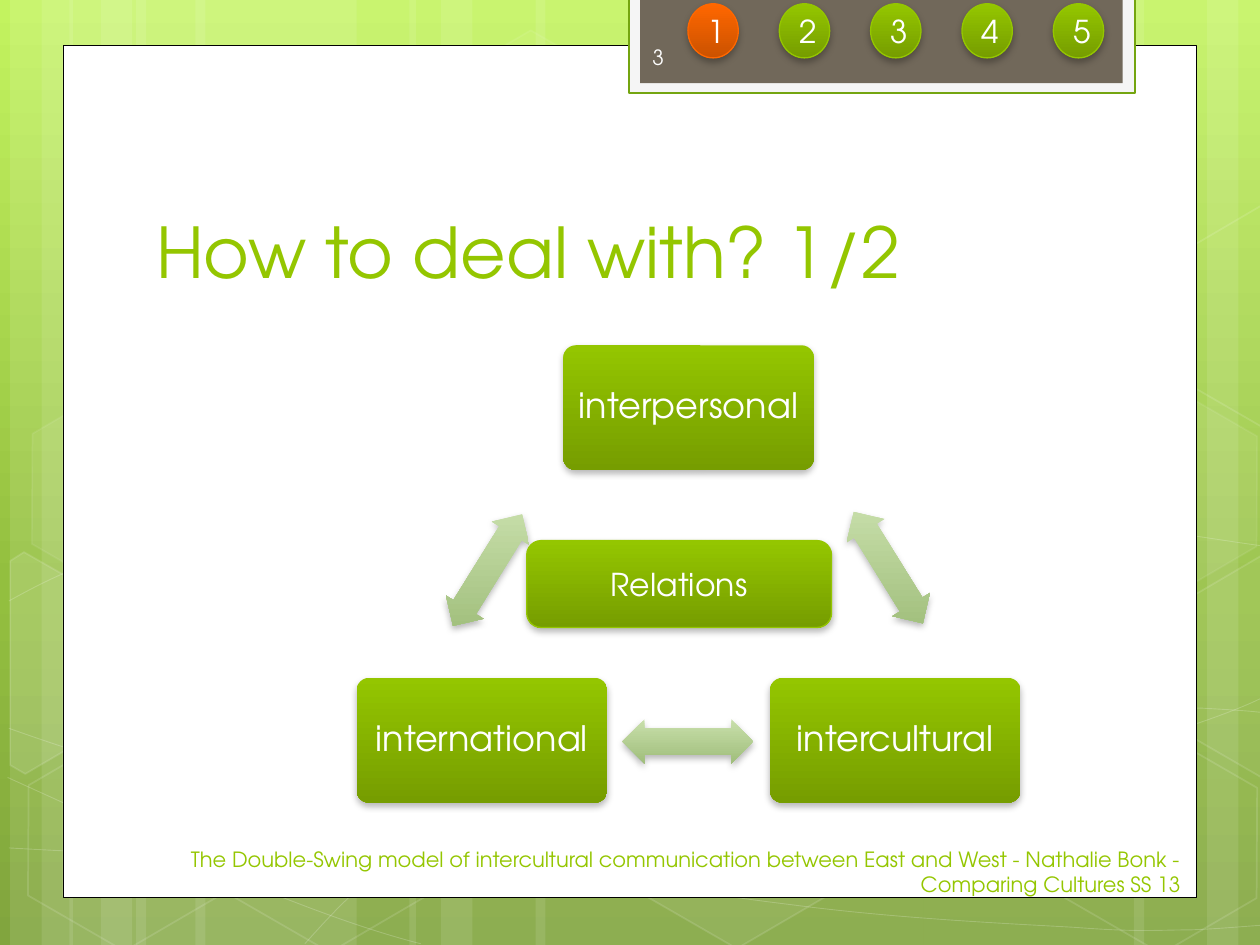
"""Build the "How to deal with?" slide with its relations cycle and numbered chapter tabs."""
from copy import deepcopy
from math import cos, radians, sin

from lxml.etree import SubElement
from pptx import Presentation
from pptx.dml.color import RGBColor
from pptx.enum.shapes import MSO_SHAPE as Shape
from pptx.enum.text import MSO_ANCHOR as Anchor, MSO_AUTO_SIZE as AutoSize, PP_ALIGN as Align
from pptx.oxml.ns import qn
from pptx.util import Inches, Pt

FONT = "TeX Gyre Adventor"
WHITE, BLACK = RGBColor(255, 255, 255), RGBColor(0, 0, 0)
NUMBER_WHITE = RGBColor(0xFE, 0xFE, 0xFE)
GREEN, DARK_GREEN = RGBColor(0x94, 0xC6, 0x00), RGBColor(0x76, 0x9D, 0x00)
ORANGE, DARK_ORANGE = RGBColor(0xFF, 0x67, 0x00), RGBColor(0xCB, 0x52, 0x00)
PALE, DARK_PALE = RGBColor(0xC8, 0xDF, 0xAB), RGBColor(0xA0, 0xBE, 0x7B)
OFF_WHITE, TAUPE = RGBColor(0xF5, 0xF5, 0xF5), RGBColor(0x71, 0x68, 0x5A)
BORDER_GREEN = RGBColor(0x74, 0xA5, 0x10)
BACKDROP = [(0, RGBColor(0xC3, 0xF3, 0x5F)), (0.62, RGBColor(0x93, 0xBF, 0x3F)),
            (1, RGBColor(0x81, 0xA5, 0x3E))]

TITLE = "How to deal with? 1/2"
FOOTER = ("The Double-Swing model of intercultural communication between East and West"
          " - Nathalie Bonk - Comparing Cultures SS 13")
PAGE_NUMBER = "3"
CHAPTERS = ["1", "2", "3", "4", "5"]
CURRENT_CHAPTER = "1"
CYCLE_NODES = [("interpersonal", 4.47, 2.74), ("intercultural", 6.11, 5.38),
               ("international", 2.83, 5.38)]
CYCLE_ARROWS = [(6.53, 4.33, 58.2), (4.94, 5.71, 180), (3.35, 4.35, 301.8)]

BANDS = [(1.08, 1.75), (0.08, 0.5), (0.33, 0.83), (1.55, 1.75), (0.55, 0.5), (0.8, 0.83),
         (7.33, 1.75), (9.58, 0.5), (9, 0.83), (4.25, 3.08), (3.25, 0.5), (3.5, 0.83)]
CURVES = [
    [(0.07, 6.73), (0.61, 6.76), (1.15, 6.79), (1.9, 6.78), (2.65, 6.77), (3.58, 6.75),
     (4.58, 6.65), (5.58, 6.55), (7, 6.36), (7.92, 6.17), (8.83, 5.98), (9.77, 5.68),
     (10.07, 5.51)],
    [(0.07, 4.77), (0.36, 4.61), (0.65, 4.46), (1.21, 4.31), (1.78, 4.16), (2.59, 3.94),
     (3.47, 3.87), (4.36, 3.8), (5.44, 3.79), (6.54, 3.87), (7.64, 3.95), (9.47, 4.26),
     (10.07, 4.34)],
    [(0.06, 6.17), (1.27, 6.72), (2.47, 7.27), (3.34, 7.49)],
    [(0.07, 5.78), (0.38, 5.89), (0.7, 6), (1.28, 6.16), (1.86, 6.31), (2.73, 6.56),
     (3.57, 6.73), (4.4, 6.9), (5.45, 7.08), (6.28, 7.18), (7.11, 7.29), (8, 7.33),
     (8.53, 7.36), (9.05, 7.4), (9.19, 7.38), (9.45, 7.38), (9.71, 7.37), (9.89, 7.35),
     (10.07, 7.34)],
    [(2.42, 7.49), (2.6, 7.29), (2.78, 7.09), (3.02, 6.91), (3.26, 6.73), (3.6, 6.53),
     (3.88, 6.39), (4.16, 6.25), (4.33, 6.19), (4.7, 6.09), (5.06, 5.99), (5.73, 5.85),
     (6.08, 5.78), (6.44, 5.71), (6.49, 5.71), (6.8, 5.69), (7.11, 5.66), (7.6, 5.63),
     (7.94, 5.62), (8.29, 5.61), (8.86, 5.62), (8.86, 5.62), (9.08, 5.62), (9.31, 5.62),
     (9.53, 5.62), (9.71, 5.63), (9.88, 5.64), (9.97, 5.65), (10.06, 5.66), (10.03, 5.65),
     (10.06, 5.66)],
]
HEXAGONS = [(3.34, 0.36, 4, 8), (4.97, 5.89, 6, 12), (0.11, 5.91, None, 12),
            (0.14, 3.12, 7, 8), (1.74, 5.92, None, 12), (7.53, 4.53, 10, 12),
            (8.34, 5.93, None, 12), (8.34, 3.14, 7, 8)]
HEXAGON_TILT = 30
CUT_HEXAGONS = [
    ((0.36, 5.35), 10,
     [(0.08, 4.45), (0.19, 4.38), (0.96, 4.82), (0.95, 5.7), (0.2, 6.14), (0.08, 6.07)]),
    ((9.85, 5.2), 4,
     [(9.26, 4.85), (10.01, 4.41), (10.09, 4.46), (10.09, 6.13), (10.02, 6.17), (9.26, 5.73)]),
    ((9.85, 2.41), None,
     [(9.26, 2.07), (10.01, 1.63), (10.1, 1.68), (10.09, 3.35), (10.02, 3.39), (9.26, 2.95)]),
]


def paint_gradient(fill, element, stops):
    fill.gradient()
    fill.gradient_angle = 270
    stop_list = next(element.iter(qn("a:gsLst")))
    stop_list.getparent().set("rotWithShape", "0")
    while len(stop_list) < len(stops):
        stop_list.append(deepcopy(stop_list[-1]))
    for stop, (position, color) in zip(fill.gradient_stops, stops):
        stop.position, stop.color.rgb = position, color


def style(shape, fill=None, line=None, width=1, alphas=()):
    shape.shadow.inherit = False
    if fill is None:
        shape.fill.background()
    elif isinstance(fill, tuple) and not isinstance(fill, RGBColor):
        paint_gradient(shape.fill, shape.element, list(enumerate(fill)))
    else:
        shape.fill.solid()
        shape.fill.fore_color.rgb = fill
    if line is None:
        shape.line.fill.background()
    else:
        shape.line.color.rgb = line
        shape.line.width = Pt(width)
    for color, alpha in zip(shape.element.spPr.iter(qn("a:srgbClr")), alphas):
        SubElement(color, qn("a:alpha"), val=str(alpha * 1000))
    return shape


def add_preset(page, preset, at, **look):
    return style(page.shapes.add_shape(preset, *map(Inches, at)), **look)


def add_outline(page, points, close, **look):
    start, *rest = [(Inches(x), Inches(y)) for x, y in points]
    builder = page.shapes.build_freeform(*start)
    builder.add_line_segments(rest, close=close)
    return style(builder.convert_to_shape(), **look)


def bend(outline):
    segments = list(outline.element.iter(qn("a:lnTo")))
    for first in range(0, len(segments), 3):
        curve = SubElement(segments[first].getparent(), qn("a:cubicBezTo"))
        for segment in segments[first:first + 3]:
            curve.append(segment[0])
            segment.getparent().remove(segment)


def turn_back(points, center, angle):
    turn = radians(-angle)
    offsets = [(x - center[0], y - center[1]) for x, y in points]
    return [(center[0] + x * cos(turn) - y * sin(turn),
             center[1] + x * sin(turn) + y * cos(turn)) for x, y in offsets]


def add_shadow(shape):
    effects = shape.element.spPr.find(qn("a:effectLst"))
    shadow = SubElement(effects, qn("a:outerShdw"), blurRad=str(Pt(4)), dist=str(Pt(2)),
                        dir="5400000", algn="ctr", rotWithShape="0")
    color = SubElement(shadow, qn("a:srgbClr"), val=str(BLACK))
    SubElement(color, qn("a:alpha"), val="28000")


def write(box, text, size=18, color=WHITE, align=Align.CENTER, anchor=Anchor.MIDDLE,
          margin=0.1, spacing=None):
    frame = box.text_frame
    frame.word_wrap, frame.auto_size, frame.vertical_anchor = True, AutoSize.NONE, anchor
    frame.margin_left = frame.margin_right = Inches(margin)
    para = frame.paragraphs[0]
    para.alignment, para.line_spacing = align, spacing
    span = para.add_run()
    span.text = text
    span.font.name, span.font.size, span.font.color.rgb = FONT, Pt(size), color


def hexagon_look(fill_alpha, line_alpha):
    if fill_alpha is None:
        return {"line": WHITE, "alphas": (line_alpha,)}
    return {"line": WHITE, "fill": WHITE, "alphas": (fill_alpha, line_alpha)}


def draw_backdrop(page):
    paint_gradient(page.background.fill, page.element, BACKDROP)
    for left, width in BANDS:
        add_preset(page, Shape.RECTANGLE, (left, 0, width, 7.5), fill=WHITE, alphas=(10,))
    for curve in CURVES:
        bend(add_outline(page, curve, False, line=WHITE, width=0.5, alphas=(20,)))
    for left, top, *alphas in HEXAGONS:
        hexagon = add_preset(page, Shape.HEXAGON, (left, top, 1.75, 1.52), **hexagon_look(*alphas))
        hexagon.adjustments[0] = 0.285
        hexagon.rotation = HEXAGON_TILT
    for center, fill_alpha, points in CUT_HEXAGONS:
        upright = turn_back(points, center, HEXAGON_TILT)
        add_outline(page, upright, True, **hexagon_look(fill_alpha, 12)).rotation = HEXAGON_TILT
    add_preset(page, Shape.RECTANGLE, (0.5, 0.36, 9, 6.76), fill=WHITE, line=BLACK, width=0.5)
    add_preset(page, Shape.RECTANGLE, (4.99, -0.02, 4.02, 0.76), fill=OFF_WHITE,
               line=BORDER_GREEN, width=1.25)
    add_preset(page, Shape.RECTANGLE, (5.08, -0.02, 3.83, 0.68), fill=TAUPE)


def draw_cycle(page):
    for text, left, top in CYCLE_NODES:
        node = add_preset(page, Shape.ROUNDED_RECTANGLE, (left, top, 1.99, 0.99),
                          fill=(GREEN, DARK_GREEN))
        node.adjustments[0] = 0.1
        add_shadow(node)
        write(node, text, size=20, margin=0.08, spacing=0.9)
    for left, top, angle in CYCLE_ARROWS:
        arrow = add_preset(page, Shape.LEFT_RIGHT_ARROW, (left, top, 1.04, 0.35),
                           fill=(PALE, DARK_PALE))
        arrow.adjustments[0], arrow.adjustments[1] = 0.6, 0.5
        arrow.rotation = angle
        add_shadow(arrow)


def draw_chapters(page):
    for index, chapter in enumerate(CHAPTERS):
        colors = (ORANGE, DARK_ORANGE) if chapter == CURRENT_CHAPTER else (GREEN, DARK_GREEN)
        add_button(page, chapter, (5.46 + 0.725 * index, 0.03, 0.4, 0.43), Shape.OVAL, colors)


def add_button(page, text, at, preset, colors):
    button = add_preset(page, preset, at, fill=colors, line=colors[0], width=0.75)
    add_shadow(button)
    write(button, text)


def main():
    deck = Presentation()
    deck.slide_width, deck.slide_height = Inches(10), Inches(7.5)
    page = deck.slides.add_slide(deck.slide_layouts[5])
    draw_backdrop(page)
    title = page.shapes.title
    title.left, title.top, title.width, title.height = map(Inches, (1.14, 1.12, 7.68, 1.25))
    write(title, TITLE, size=40, color=GREEN, align=Align.LEFT, anchor=Anchor.BOTTOM)
    title.element.getparent().append(title.element)
    draw_cycle(page)
    number = page.shapes.add_textbox(*map(Inches, (5.08, 0.25, 1.46, 0.4)))
    write(number, PAGE_NUMBER, size=12, color=NUMBER_WHITE, align=Align.LEFT)
    draw_chapters(page)
    add_button(page, "Relations", (4.18, 4.29, 2.42, 0.69), Shape.ROUNDED_RECTANGLE,
               (GREEN, DARK_GREEN))
    footer = page.shapes.add_textbox(*map(Inches, (0.54, 6.72, 8.93, 0.4)))
    write(footer, FOOTER, size=12, color=GREEN, align=Align.RIGHT)
    deck.save("out.pptx")


if __name__ == "__main__":
    main()
